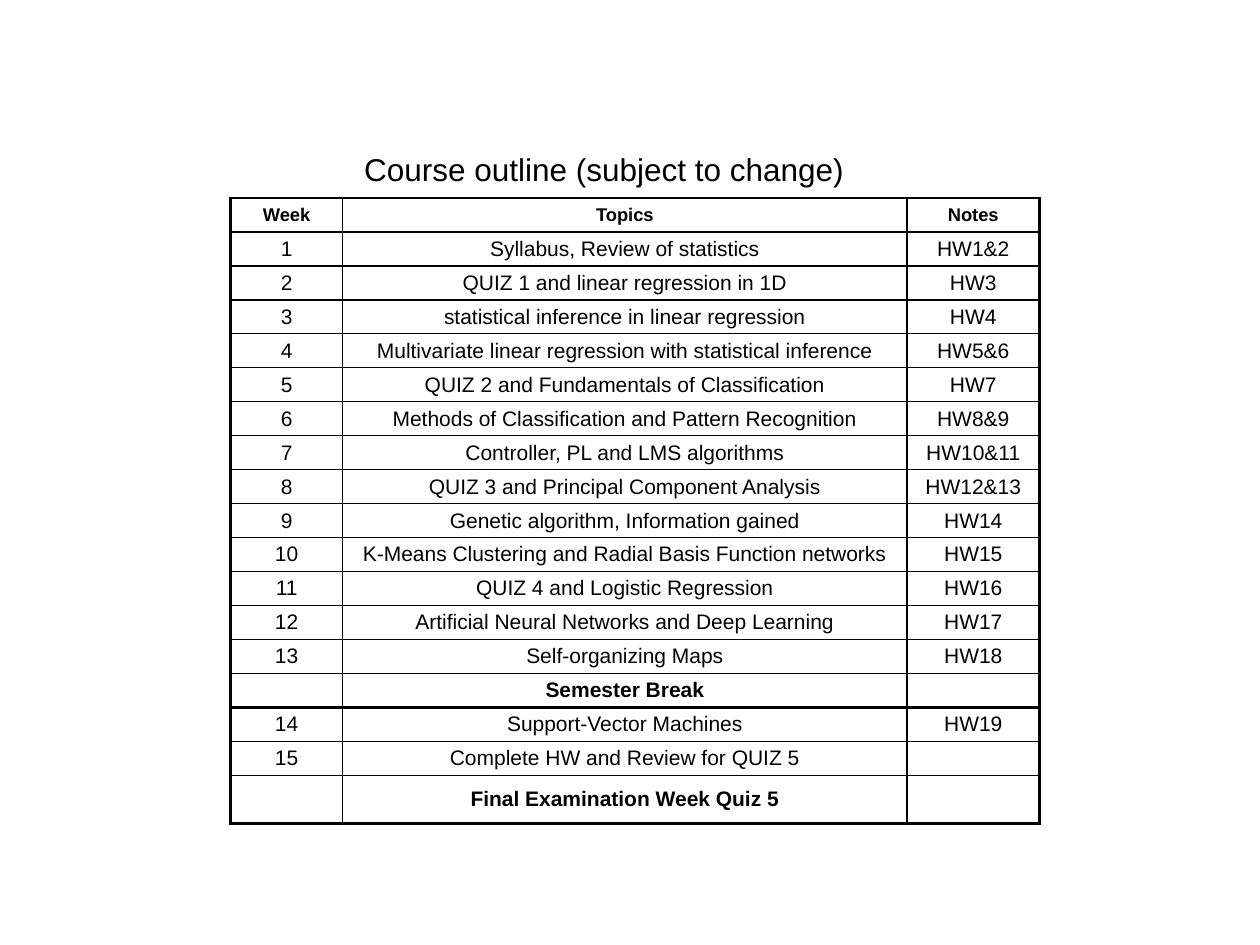
from dataclasses import dataclass

from lxml.etree import SubElement
from pptx import Presentation
from pptx.dml.color import RGBColor
from pptx.enum.text import MSO_ANCHOR, MSO_AUTO_SIZE, PP_ALIGN
from pptx.oxml import parse_xml
from pptx.oxml.ns import nsdecls, qn
from pptx.util import Inches, Pt


@dataclass(frozen=True)
class Theme:
    font: str = "Arial"
    ink: str = "000000"
    paper: str = "FFFFFF"
    title: float = 18
    head: float = 10.5
    body: float = 12
    thin: float = 1
    thick: float = 1.5


THEME = Theme()
BREAK = "Semester Break"
FINAL = "Final Examination Week Quiz 5"
ROWS = [
    ("Week", "Topics", "Notes"),
    ("1", "Syllabus, Review of statistics", "HW1&2"),
    ("2", "QUIZ 1 and linear regression in 1D", "HW3"),
    ("3", "statistical inference in linear regression", "HW4"),
    ("4", "Multivariate linear regression with statistical inference", "HW5&6"),
    ("5", "QUIZ 2 and Fundamentals of Classification", "HW7"),
    ("6", "Methods of Classification and Pattern Recognition", "HW8&9"),
    ("7", "Controller, PL and LMS algorithms", "HW10&11"),
    ("8", "QUIZ 3 and Principal Component Analysis", "HW12&13"),
    ("9", "Genetic algorithm, Information gained", "HW14"),
    ("10", "K-Means Clustering and Radial Basis Function networks", "HW15"),
    ("11", "QUIZ 4 and Logistic Regression", "HW16"),
    ("12", "Artificial Neural Networks and Deep Learning", "HW17"),
    ("13", "Self-organizing Maps", "HW18"),
    ("", BREAK, ""),
    ("14", "Support-Vector Machines", "HW19"),
    ("15", "Complete HW and Review for QUIZ 5", ""),
    ("", FINAL, ""),
]
WIDTHS = (0.89, 4.48, 1.05)
HEIGHTS = [0.27] * (len(ROWS) - 1) + [0.38]


def style(para, size, bold=False):
    for run in para.runs:
        font = run.font
        font.name, font.size, font.bold = THEME.font, Pt(size), bold
        font.color.rgb = RGBColor.from_string(THEME.ink)
    if not para.runs:
        # An empty cell still needs a type size, or its row would grow.
        SubElement(para._p, qn("a:endParaRPr"), sz=str(int(size * 100)))


def add_title(slide, left, top, width, height):
    title = slide.shapes.title
    title.left, title.top = Inches(left), Inches(top)
    title.width, title.height = Inches(width), Inches(height)
    frame = title.text_frame
    frame.text = "Course outline (subject to change)"
    frame.word_wrap = True
    frame.auto_size = MSO_AUTO_SIZE.NONE
    frame.vertical_anchor = MSO_ANCHOR.TOP
    para = frame.paragraphs[0]
    para.alignment = PP_ALIGN.LEFT
    style(para, THEME.title)


def add_edges(cell, widths):
    """Draw the left, right, top and bottom borders, in points."""
    props = cell._tc.get_or_add_tcPr()
    for place, (side, width) in enumerate(zip("LRTB", widths)):
        props.insert(place, parse_xml(
            f'<a:ln{side} {nsdecls("a")} w="{Pt(width)}"><a:solidFill>'
            f'<a:srgbClr val="{THEME.ink}"/></a:solidFill></a:ln{side}>'))


def fill_cell(cell, text, size, bold):
    cell.text_frame.text = text
    cell.vertical_anchor = MSO_ANCHOR.MIDDLE
    cell.margin_left = cell.margin_right = Inches(0.02)
    cell.margin_top = cell.margin_bottom = Inches(0.01)
    cell.fill.background()
    para = cell.text_frame.paragraphs[0]
    para.alignment = PP_ALIGN.CENTER
    style(para, size, bold)


def add_plan(slide, left, top):
    """Place the table of weeks, topics and notes."""
    table = slide.shapes.add_table(
        len(ROWS), len(WIDTHS), Inches(left), Inches(top),
        Inches(sum(WIDTHS)), Inches(sum(HEIGHTS))).table
    table.first_row = table.horz_banding = False
    for col, width in zip(table.columns, WIDTHS):
        col.width = Inches(width)
    for row, height in zip(table.rows, HEIGHTS):
        row.height = Inches(height)

    topics = [row[1] for row in ROWS]
    rules = {0, 1, topics.index(BREAK) + 1, len(ROWS)}
    sides = {0, len(WIDTHS)}
    for r, row in enumerate(ROWS):
        size = THEME.body if r else THEME.head
        bold = r == 0 or row[1] in (BREAK, FINAL)
        for c, text in enumerate(row):
            cell = table.cell(r, c)
            fill_cell(cell, text, size, bold)
            heavy = (c in sides, c + 1 in sides, r in rules, r + 1 in rules)
            add_edges(cell, [THEME.thick if h else THEME.thin for h in heavy])


def main():
    deck = Presentation()
    deck.slide_width, deck.slide_height = Inches(10), Inches(7.5)
    slide = deck.slides.add_slide(deck.slide_layouts.get_by_name("Title Only"))
    back = slide.background.fill
    back.solid()
    back.fore_color.rgb = RGBColor.from_string(THEME.paper)
    add_title(slide, 2.79, 1.14, 4.62, 0.4)
    add_plan(slide, 1.83, 1.57)
    deck.save("out.pptx")


if __name__ == "__main__":
    main()
